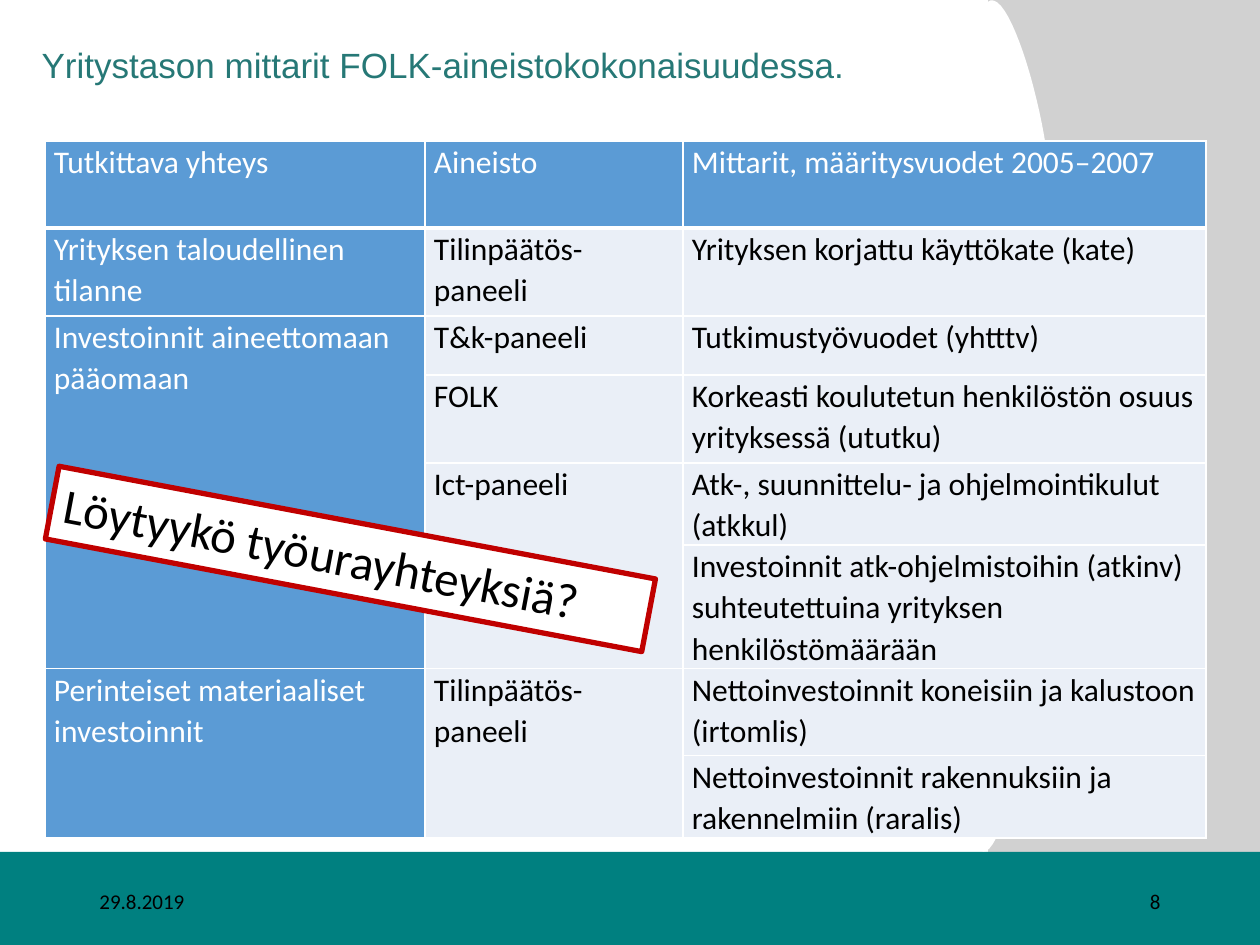
from lxml.etree import SubElement
from pptx import Presentation
from pptx.dml.color import RGBColor
from pptx.enum.shapes import MSO_SHAPE
from pptx.enum.text import MSO_ANCHOR, PP_ALIGN
from pptx.oxml import parse_xml
from pptx.oxml.ns import nsdecls, qn
from pptx.util import Pt

EMU_PER_PX = 914400 / 126
BLUE, PALE, WHITE, BLACK = "5B9BD5", "EAEFF7", "FFFFFF", "000000"
COLUMN_WIDTHS = [380, 258, 523]
ROW_HEIGHTS = [87, 88, 59, 88, 78, 117, 87, 78]
ROWS = [
    ["Tutkittava yhteys", "Aineisto", "Mittarit, määritysvuodet 2005–2007"],
    ["Yrityksen taloudellinen tilanne", "Tilinpäätös-paneeli", "Yrityksen korjattu käyttökate (kate)"],
    ["Investoinnit aineettomaan pääomaan", "T&k-paneeli", "Tutkimustyövuodet (yhtttv)"],
    [None, "FOLK", "Korkeasti koulutetun henkilöstön osuus yrityksessä (ututku)"],
    [None, "Ict-paneeli", "Atk-, suunnittelu- ja ohjelmointikulut (atkkul)"],
    [None, None, "Investoinnit atk-ohjelmistoihin (atkinv) suhteutettuina yrityksen henkilöstömäärään"],
    ["Perinteiset materiaaliset investoinnit", "Tilinpäätös-paneeli",
     "Nettoinvestoinnit koneisiin ja kalustoon (irtomlis)"],
    [None, None, "Nettoinvestoinnit rakennuksiin ja rakennelmiin (raralis)"],
]
MERGES = [(2, 0, 5), (4, 1, 5), (6, 0, 7), (6, 1, 7)]
CURVE_START = (976, 42)
CURVES = [
    [(988, -69), (1036, 66), (1048, 161)],
    [(1061, 257), (1063, 503), (1051, 612)],
    [(1038, 723), (986, 921), (974, 827)],
    [(961, 731), (964, 152), (976, 42)],
]


def px(length):
    return round(length * EMU_PER_PX)


def color(value):
    return RGBColor.from_string(value)


def write_text(frame, text, size=18, font="Calibri", fill=BLACK,
               align=PP_ALIGN.LEFT, anchor=MSO_ANCHOR.TOP, spacing=None):
    frame.word_wrap = True
    frame.vertical_anchor = anchor
    paragraph = frame.paragraphs[0]
    paragraph.alignment = align
    paragraph.line_spacing = spacing
    run = paragraph.add_run()
    run.text = text
    run.font.size = Pt(size)
    run.font.name = font
    run.font.bold = False
    run.font.color.rgb = color(fill)


def paint(shape, fill, line=None, width=3):
    shape.shadow.inherit = False
    shape.fill.solid()
    shape.fill.fore_color.rgb = color(fill)
    if line:
        shape.line.color.rgb = color(line)
        shape.line.width = Pt(width)
    else:
        shape.line.fill.background()


def add_rectangle(slide, box, fill, **line_format):
    shape = slide.shapes.add_shape(MSO_SHAPE.RECTANGLE, *map(px, box))
    paint(shape, fill, **line_format)
    return shape


def curve_points(start, curves, steps=24):
    points = []
    for first, second, end in curves:
        for step in range(1, steps + 1):
            t = step / steps
            weights = ((1 - t) ** 3, 3 * t * (1 - t) ** 2, 3 * t ** 2 * (1 - t), t ** 3)
            corners = (start, first, second, end)
            points.append(tuple(px(sum(w * corner[axis] for w, corner in zip(weights, corners)))
                                for axis in (0, 1)))
        start = end
    return points


def add_backdrop(slide, box):
    left, top, width, height = box
    band_top = top + 852
    panel = add_rectangle(slide, (left + 988, top, width - 988, 926), "A5A5A5")
    panel_color = panel.fill._xPr.find(qn("a:solidFill"))[0]
    SubElement(panel_color, qn("a:alpha"), val="50000")
    add_rectangle(slide, (left, band_top, width, top + height - band_top), "008080")
    builder = slide.shapes.build_freeform(*map(px, CURVE_START), scale=1.0)
    builder.add_line_segments(curve_points(CURVE_START, CURVES), close=True)
    paint(builder.convert_to_shape(px(left), px(top)), WHITE)


def add_footer(slide, box):
    left, top, width, height = box
    label_width = 284
    for offset, text, align in [(0, "29.8.2019", PP_ALIGN.LEFT),
                                (width - label_width, "8", PP_ALIGN.RIGHT)]:
        label = slide.shapes.add_textbox(*map(px, (left + offset, top, label_width, height)))
        write_text(label.text_frame, text, size=12, align=align, anchor=MSO_ANCHOR.MIDDLE)


def add_title(slide, box):
    title = slide.shapes.title
    title.left, title.top, title.width, title.height = map(px, box)
    write_text(title.text_frame, "Yritystason mittarit FOLK-aineistokokonaisuudessa.",
               size=20, font="Arial", fill="267876", anchor=MSO_ANCHOR.MIDDLE, spacing=0.9)
    slide.shapes._spTree.append(title._element)


def add_borders(cell, bottom):
    properties = cell._tc.get_or_add_tcPr()
    widths = {"lnL": 1, "lnR": 1, "lnT": 1, "lnB": bottom}
    for index, (side, width) in enumerate(widths.items()):
        properties.insert(index, parse_xml(
            f'<a:{side} {nsdecls("a")} w="{Pt(width)}"><a:solidFill>'
            f'<a:srgbClr val="{WHITE}"/></a:solidFill></a:{side}>'))


def add_measures_table(slide, box):
    table = slide.shapes.add_table(len(ROWS), len(COLUMN_WIDTHS), *map(px, box)).table
    for column, width in zip(table.columns, COLUMN_WIDTHS):
        column.width = px(width)
    for row, height in zip(table.rows, ROW_HEIGHTS):
        row.height = px(height)
    for row_index, texts in enumerate(ROWS):
        for column_index, text in enumerate(texts):
            cell = table.cell(row_index, column_index)
            heading = row_index == 0 or column_index == 0
            cell.fill.solid()
            cell.fill.fore_color.rgb = color(BLUE if heading else PALE)
            cell.margin_left = cell.margin_right = px(9)
            cell.margin_top = cell.margin_bottom = 0
            add_borders(cell, bottom=3 if row_index == 0 else 1)
            if text:
                write_text(cell.text_frame, text, fill=WHITE if heading else BLACK, spacing=1.07)
    for first_row, column_index, last_row in MERGES:
        table.cell(first_row, column_index).merge(table.cell(last_row, column_index))


def add_question(slide, box):
    banner = add_rectangle(slide, box, WHITE, line="C00000")
    banner.rotation = 10.7
    write_text(banner.text_frame, "Löytyykö työurayhteyksiä?", size=28)


def main():
    presentation = Presentation()
    presentation.slide_width, presentation.slide_height = px(1260), px(945)
    slide = presentation.slides.add_slide(presentation.slide_layouts[5])
    add_backdrop(slide, (0, 0, 1260, 945))
    add_footer(slide, (87, 876, 1086, 50))
    add_title(slide, (29, 36, 1203, 63))
    add_measures_table(slide, (45, 141, sum(COLUMN_WIDTHS), sum(ROW_HEIGHTS)))
    add_question(slide, (47, 522, 607, 74))
    presentation.save("out.pptx")


if __name__ == "__main__":
    main()
